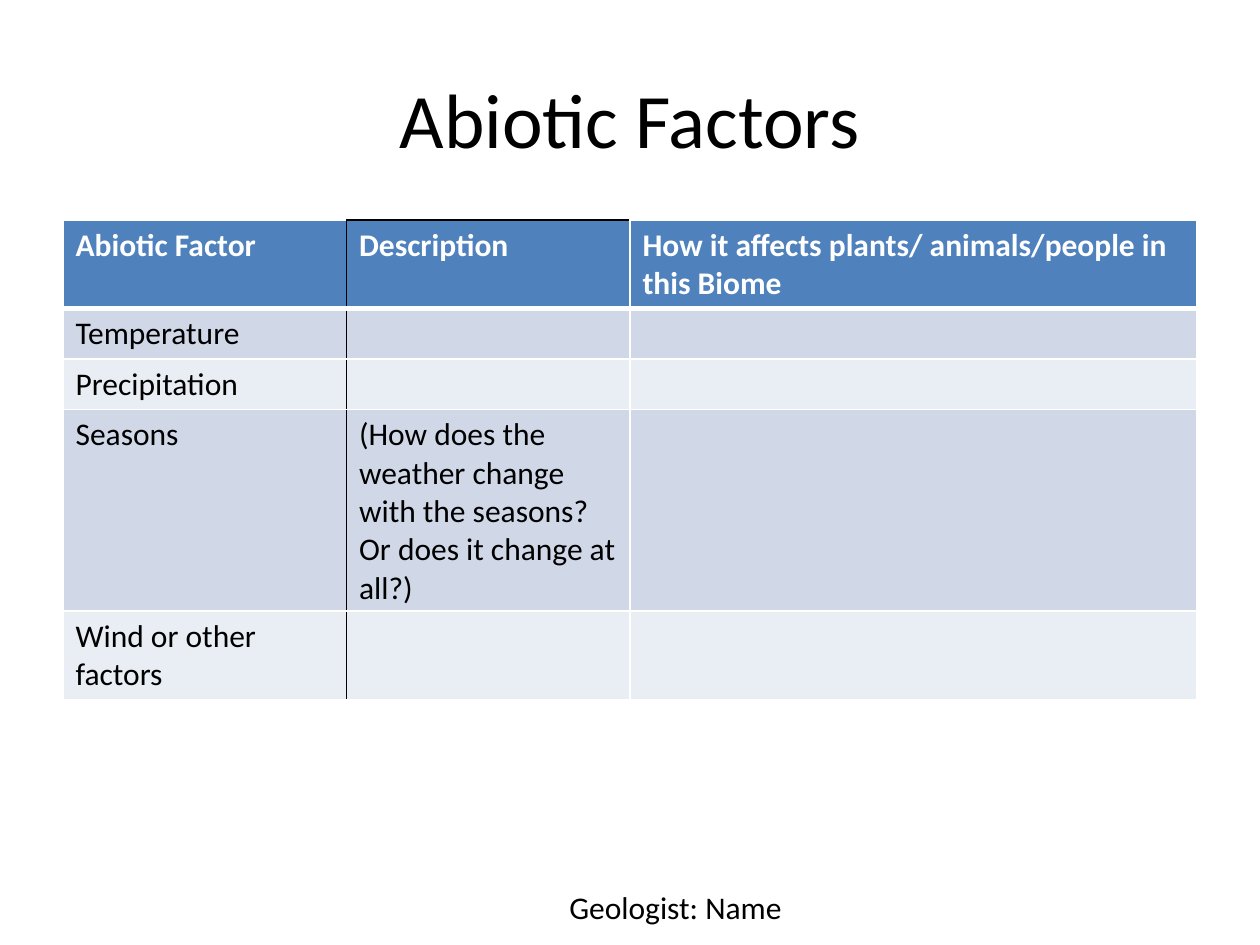
from lxml.etree import SubElement
from pptx import Presentation
from pptx.dml.color import RGBColor
from pptx.enum.text import MSO_ANCHOR, PP_ALIGN
from pptx.oxml.ns import qn
from pptx.util import Inches, Pt

BLACK = RGBColor(0x00, 0x00, 0x00)
WHITE = RGBColor(0xFF, 0xFF, 0xFF)
BLUE = RGBColor(0x4F, 0x81, 0xBD)
BANDS = [RGBColor(0xD0, 0xD8, 0xE8), RGBColor(0xE9, 0xED, 0xF4)]
FONT = "Calibri"
WIDE, HIGH = Inches(10), Inches(7.5)

ROWS = [
    ["Abiotic Factor", "Description",
     "How it affects plants/ animals/people in this Biome"],
    ["Temperature", "", ""],
    ["Precipitation", "", ""],
    ["Seasons", "(How does the weather change with the seasons? "
     "Or does it change at all?)", ""],
    ["Wind or other factors", "", ""],
]
COLS = [1, 1, 2]  # relative widths
LINES = [2, 1, 1, 5, 2]  # text lines in each row
LINE, PAD = Inches(0.3), Inches(0.1)


def area(left, top, width, height):
    """Turn shares of the slide into a box."""
    return (round(left * WIDE), round(top * HIGH),
            round(width * WIDE), round(height * HIGH))


def write(frame, text, size=18, color=BLACK, bold=False, align=PP_ALIGN.LEFT):
    para = frame.paragraphs[0]
    para.alignment = align
    font = para.font
    if text:
        run = para.add_run()
        run.text = text
        font = run.font
    font.name, font.size, font.bold = FONT, Pt(size), bold
    font.color.rgb = color


def label(slide, box, text, anchor=MSO_ANCHOR.TOP, **style):
    frame = slide.shapes.add_textbox(*box).text_frame
    frame.word_wrap = True
    frame.vertical_anchor = anchor
    write(frame, text, **style)


def edge(cell, side, color=WHITE, width=1):
    line = SubElement(cell._tc.get_or_add_tcPr(), qn("a:ln" + side),
                      w=str(Pt(width)))
    fill = SubElement(line, qn("a:solidFill"))
    SubElement(fill, qn("a:srgbClr"), val=str(color))


def frame_cell(cell, row, col):
    """Draw white rules, with black ones beside and above Description."""
    edge(cell, "L", BLACK if col == 1 else WHITE)
    edge(cell, "R", BLACK if col == 0 else WHITE)
    edge(cell, "T", BLACK if (row, col) == (0, 1) else WHITE,
         3 if row == 1 else 1)
    edge(cell, "B", width=3 if row == 0 else 1)


def factors(slide, box):
    table = slide.shapes.add_table(len(ROWS), len(COLS), *box).table
    for col, part in zip(table.columns, COLS):
        col.width = box[2] * part // sum(COLS)
    for row, count in zip(table.rows, LINES):
        row.height = count * LINE + PAD
    for i, texts in enumerate(ROWS):
        head = i == 0
        for j, text in enumerate(texts):
            cell = table.cell(i, j)
            write(cell.text_frame, text, bold=head,
                  color=WHITE if head else BLACK)
            # Borders must come before the fill
            frame_cell(cell, i, j)
            cell.fill.solid()
            cell.fill.fore_color.rgb = BLUE if head else BANDS[(i - 1) % 2]


def main():
    deck = Presentation()
    deck.slide_width, deck.slide_height = WIDE, HIGH
    slide = deck.slides.add_slide(deck.slide_layouts[6])

    # Title
    label(slide, area(0.05, 0.04, 0.9, 0.17), "Abiotic Factors", size=44,
          align=PP_ALIGN.CENTER, anchor=MSO_ANCHOR.MIDDLE)
    # Table of factors
    factors(slide, area(0.05, 0.233, 0.9, 0.51))
    # Signature
    label(slide, area(0.442, 0.933, 0.542, 0.054), "Geologist: Name")

    deck.save("out.pptx")


if __name__ == "__main__":
    main()
